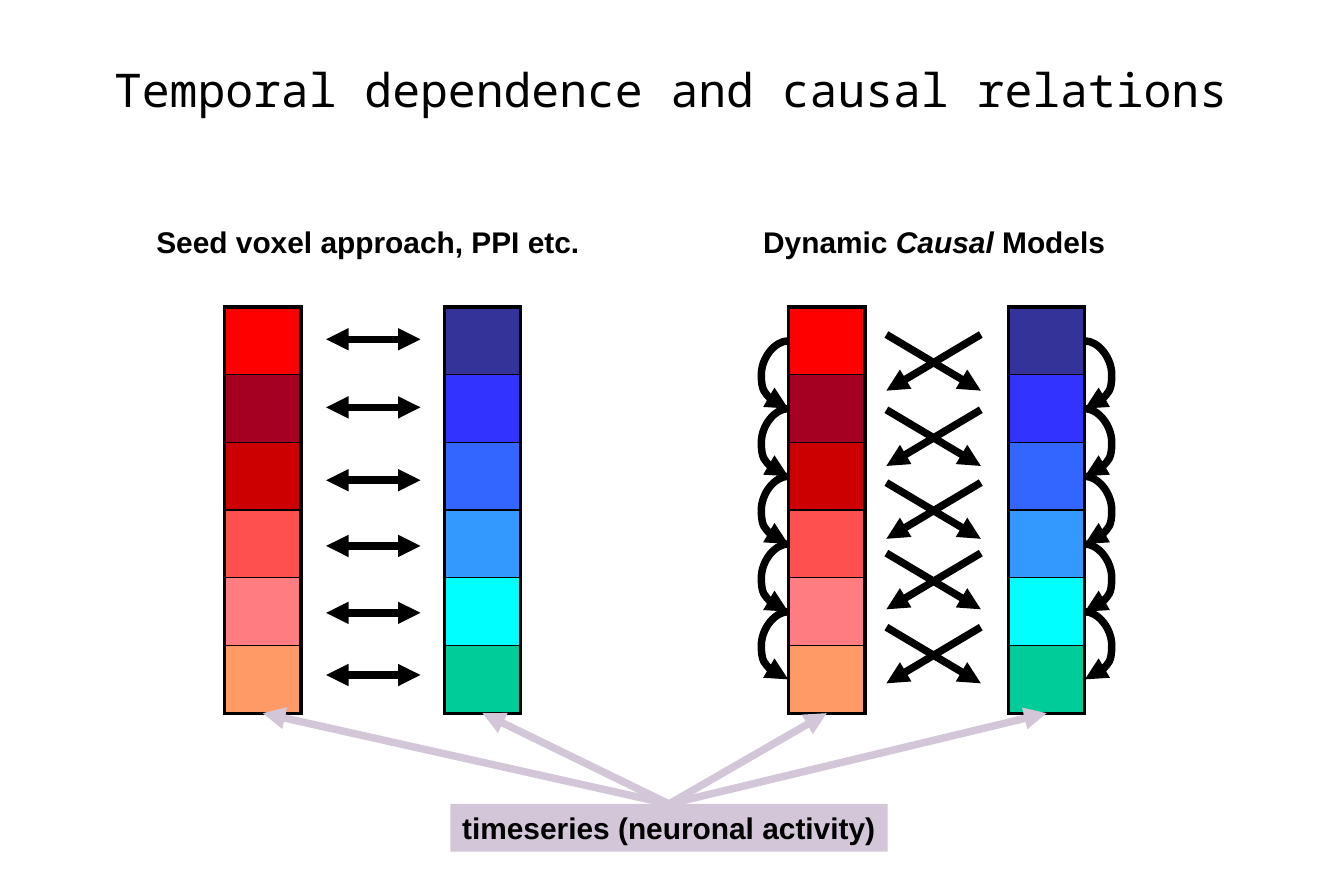
"""Build a slide comparing temporal dependence in two connectivity approaches."""
from lxml import etree
from pptx import Presentation
from pptx.dml.color import RGBColor
from pptx.enum.shapes import MSO_CONNECTOR, MSO_SHAPE
from pptx.enum.text import MSO_ANCHOR, MSO_AUTO_SIZE, PP_ALIGN
from pptx.oxml.ns import qn
from pptx.util import Inches, Pt

STRAIGHT, CURVE = MSO_CONNECTOR.STRAIGHT, MSO_CONNECTOR.CURVE
RECTANGLE = MSO_SHAPE.RECTANGLE
MIDDLE, TOP = MSO_ANCHOR.MIDDLE, MSO_ANCHOR.TOP
CENTER, LEFT = PP_ALIGN.CENTER, PP_ALIGN.LEFT
FIT_SHAPE = MSO_AUTO_SIZE.SHAPE_TO_FIT_TEXT

COLORS = {"ink": "000000", "lilac": "D2C6D8"}
REDS = ["FF0000", "A50021", "CC0000", "FF5050", "FF7C80", "FF9966"]
BLUES = ["333399", "3333FF", "3366FF", "3399FF", "00FFFF", "00CC99"]

deck = Presentation()
deck.slide_width, deck.slide_height = Inches(11.25), Inches(7.5)
page = deck.slides.add_slide(deck.slide_layouts[6])
GRID = deck.slide_width // 45

BAR_TOP, BAR_WIDTH, BAR_HEIGHT = 10.28, 2.56, 13.6
BAR_BOTTOM = BAR_TOP + BAR_HEIGHT
CELL = BAR_HEIGHT / len(REDS)
BARS = [(7.52, REDS), (14.88, BLUES), (26.4, REDS), (33.76, BLUES)]
CURVE_WIDTH, CURVE_BULGE = 1588, 1


def write(box, *texts, font="Arial", size=18, bold=True, italic=(),
          align=LEFT, anchor=TOP, wrap=False):
    frame = box.text_frame
    frame.word_wrap, frame.auto_size = wrap, FIT_SHAPE
    frame.vertical_anchor = anchor
    para = frame.paragraphs[0]
    para.alignment = align
    for text in texts:
        span = para.add_run()
        span.text = text
        span.font.name, span.font.size = font, Pt(size)
        span.font.bold, span.font.italic = bold, text in italic
        span.font.color.rgb = RGBColor.from_string(COLORS["ink"])
    return frame


def draw_arrow(shapes, start, end, kind=STRAIGHT, color="ink", ends=("tailEnd",)):
    points = [round(value * GRID) for value in (*start, *end)]
    arrow = shapes.add_connector(kind, *points)
    arrow.line.width = Pt(4.5)
    arrow.line.color.rgb = RGBColor.from_string(COLORS[color])
    for tip in ends:
        etree.SubElement(arrow.line._get_or_add_ln(), qn(f"a:{tip}"), type="triangle")
    etree.SubElement(arrow._element.spPr, qn("a:effectLst"))
    return arrow


title = page.shapes.add_textbox(2 * GRID, int(2.04 * GRID), int(40.92 * GRID), int(1.88 * GRID))
frame = write(title, "Temporal dependence and causal relations", font="Noto Sans Mono",
              size=28, bold=False, align=CENTER, anchor=MIDDLE, wrap=True)
frame.margin_left = frame.margin_right = frame.margin_top = frame.margin_bottom = 0

headings = [(4.84, 15.24, ["Seed voxel approach, PPI etc."]),
            (25.16, 12.24, ["Dynamic ", "Causal ", "Models"])]
for left, width, texts in headings:
    heading = page.shapes.add_textbox(int(left * GRID), int(7.28 * GRID),
                                      int(width * GRID), int(1.6 * GRID))
    write(heading, *texts, italic=("Causal ",))

for left, shades in BARS:
    bar = page.shapes.add_table(len(shades), 1, int(left * GRID), int(BAR_TOP * GRID),
                                int(BAR_WIDTH * GRID), int(BAR_HEIGHT * GRID)).table
    bar.first_row = bar.horz_banding = False
    for index, shade in enumerate(shades):
        cell = bar.cell(index, 0)
        widths = {"lnL": 2.25, "lnR": 2.25,
                  "lnT": 2.25 if index == 0 else 1,
                  "lnB": 2.25 if index == len(shades) - 1 else 1}
        for side, width in widths.items():
            border = etree.SubElement(cell._tc.get_or_add_tcPr(), qn(f"a:{side}"),
                                      w=str(Pt(width)))
            paint = etree.SubElement(border, qn("a:solidFill"))
            etree.SubElement(paint, qn("a:srgbClr"), val=COLORS["ink"])
        cell.fill.solid()
        cell.fill.fore_color.rgb = RGBColor.from_string(shade)

for row in (11.36, 13.64, 16.08, 18.28, 20.52, 22.6):
    draw_arrow(page.shapes, (10.92, row), (14.08, row), ends=("headEnd", "tailEnd"))

for top in (11.2, 13.72, 16.16, 18.52, 21):
    cross = page.shapes.add_group_shape()
    for start, end in ((29.68, 32.84), (32.84, 29.68)):
        draw_arrow(cross.shapes, (start, top), (end, top + 1.88))

for edge, direction in ((BARS[2][0], -1), (BARS[3][0] + BAR_WIDTH, 1)):
    for step in range(len(REDS) - 1):
        row = BAR_TOP + (step + 0.5) * CELL
        loop = draw_arrow(page.shapes, (edge, row),
                          (edge + direction * CURVE_WIDTH / GRID, row + CELL), kind=CURVE)
        guides = loop._element.spPr.find(qn("a:prstGeom")).get_or_add_avLst()
        bulge = round(CURVE_BULGE * GRID / CURVE_WIDTH * 100000)
        etree.SubElement(guides, qn("a:gd"), name="adj1", fmla=f"val {bulge}")

label = page.shapes.add_shape(RECTANGLE, int(15.08 * GRID), int(26.92 * GRID),
                              int(14.64 * GRID), int(1.6 * GRID))
label.shadow.inherit = False
label.fill.solid()
label.fill.fore_color.rgb = RGBColor.from_string(COLORS["lilac"])
label.line.fill.background()
write(label, "timeseries (neuronal activity)")

for left, shades in BARS:
    pointer = draw_arrow(page.shapes, (22.4, 26.92), (left + BAR_WIDTH / 2, BAR_BOTTOM),
                         color="lilac")
    pointer.begin_connect(label, 0)

deck.save("out.pptx")
